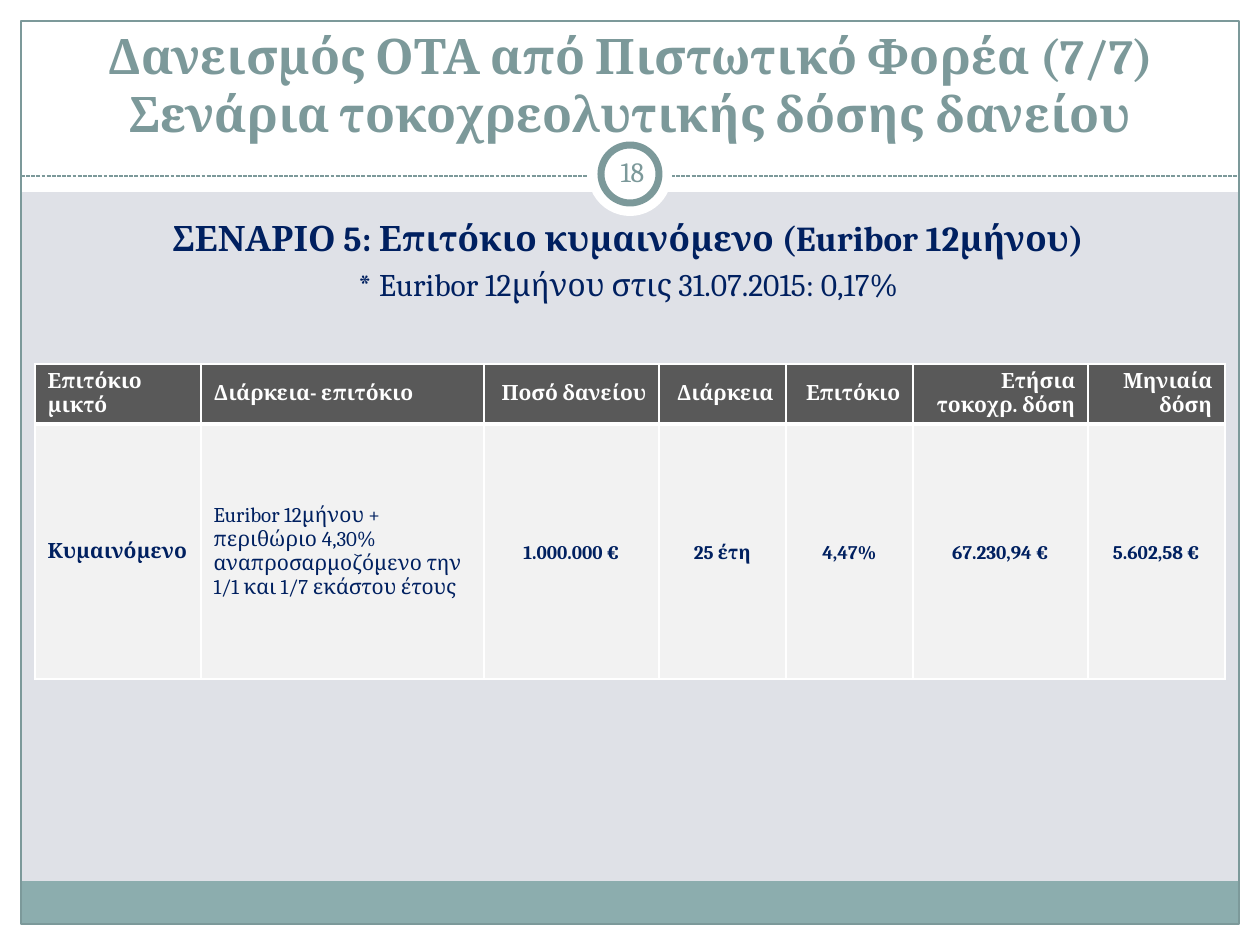
from lxml import etree
from pptx import Presentation
from pptx import util as u
from pptx.dml.color import RGBColor
from pptx.enum import dml, shapes, text
from pptx.oxml import ns

# Content
TITLE = "Δανεισμός ΟΤΑ από Πιστωτικό Φορέα (7/7)\nΣενάρια τοκοχρεολυτικής δόσης δανείου"
PAGE_NUMBER = "18"
BODY = [
    [("ΣΕΝΑΡΙΟ 5: Επιτόκιο κυμαινόμενο (Euribor 12μήνου)", "scenario")],
    [("* ", "note_mark"), ("Euribor 12μήνου στις 31.07.2015: 0,17%", "note")],
]
HEADER = ["Επιτόκιο μικτό", "Διάρκεια- επιτόκιο", "Ποσό δανείου", "Διάρκεια",
          "Επιτόκιο", "Ετήσια τοκοχρ. δόση", "Μηνιαία δόση"]
LOAN = ["Κυμαινόμενο",
        "Euribor 12μήνου + περιθώριο 4,30% αναπροσαρμοζόμενο την 1/1 και 1/7 εκάστου έτους",
        "1.000.000 €", "25 έτη", "4,47%", "67.230,94 €", "5.602,58 €"]
LABEL_COLUMNS = 2

# Theme: colours and type styles
THEME = {
    "background": "DFE1E7", "white": "FFFFFF", "band": "8CADAE", "accent": "7C999A",
    "navy": "002060", "header_fill": "595959", "loan_fill": "F2F2F2",
    "font": "Cambria",
    "styles": {
        "title": {"size": 28, "bold": True, "color": "accent"},
        "number": {"size": 16, "bold": False, "color": "accent"},
        "scenario": {"size": 20, "bold": True, "color": "navy"},
        "note_mark": {"size": 18, "bold": True, "color": "navy"},
        "note": {"size": 18, "bold": False, "color": "navy"},
        "header": {"size": 12, "bold": True, "color": "white"},
        "label": {"size": 12, "bold": True, "color": "navy"},
        "terms": {"size": 12, "bold": False, "color": "navy"},
        "figure": {"size": 11, "bold": True, "color": "navy"},
    },
}

# Geometry in px
SCALE = u.Inches(1) / 126
WIDTH, HEIGHT, MARGIN = 1260, 945, 21
TOP, RULE_Y = 192, 176
INNER = WIDTH - 2 * MARGIN
BOTTOM = HEIGHT - MARGIN
RECT, OVAL = shapes.MSO_SHAPE.RECTANGLE, shapes.MSO_SHAPE.OVAL
MARGIN_STRIPS = [(0, BOTTOM, WIDTH, MARGIN), (0, 0, WIDTH, TOP),
                 (0, 0, MARGIN, HEIGHT), (WIDTH - MARGIN, 0, MARGIN, HEIGHT)]
TITLE_BOX = (42, 26, 1176, 123)
NUMBER_BOX = (601, 141, 63, 60)
BODY_BOX = (42, 210, 1172, 630)
TABLE_AT = (35, 364)
COLUMNS = [166, 283, 175, 127, 127, 175, 137]
ROWS = [60, 255]
LEFT, CENTER, RIGHT = text.PP_ALIGN.LEFT, text.PP_ALIGN.CENTER, text.PP_ALIGN.RIGHT


def px(value):
    return u.Emu(round(value * SCALE))


def color(name):
    return RGBColor.from_string(THEME[name])


def assign(target, values):
    for name, value in values.items():
        setattr(target, name, value)


def place(shape, box):
    assign(shape, dict(zip(("left", "top", "width", "height"), map(px, box))))


def write(paragraph, runs, align, **spacing):
    assign(paragraph, {"alignment": align, **spacing})
    for words, style_name in runs:
        style = THEME["styles"][style_name]
        for index, line in enumerate(words.split("\n")):
            if index:
                paragraph.add_line_break()
            run = paragraph.add_run()
            run.text = line
            assign(run.font, {"name": THEME["font"], "size": u.Pt(style["size"]),
                              "bold": style["bold"]})
            run.font.color.rgb = color(style["color"])


def add_part(slide, kind, box, fill=None, line=None, weight=0.75):
    shape = slide.shapes.add_shape(kind, *map(px, box))
    shape.shadow.inherit = False
    if fill:
        shape.fill.solid()
        shape.fill.fore_color.rgb = color(fill)
    else:
        shape.fill.background()
    if line:
        shape.line.color.rgb = color(line)
        shape.line.width = u.Pt(weight)
    else:
        shape.line.fill.background()


def add_frame(slide):
    for strip in MARGIN_STRIPS:
        add_part(slide, RECT, strip, "white")
    add_part(slide, RECT, (MARGIN, BOTTOM - 43, INNER, 43), "band")
    add_part(slide, RECT, (MARGIN, MARGIN, INNER, HEIGHT - 2 * MARGIN), line="accent")
    rule = slide.shapes.add_connector(shapes.MSO_CONNECTOR.STRAIGHT, px(MARGIN), px(RULE_Y),
                                      px(WIDTH - MARGIN), px(RULE_Y))
    rule.line.color.rgb = color("accent")
    assign(rule.line, {"width": u.Pt(0.75), "dash_style": dml.MSO_LINE.SQUARE_DOT})
    etree.SubElement(rule.element.spPr, ns.qn("a:effectLst"))
    # Page number ring, centred on the slide
    for diameter, line in ((84, None), (58, "accent")):
        box = (WIDTH / 2 - diameter / 2, 174 - diameter / 2, diameter, diameter)
        add_part(slide, OVAL, box, "white", line, 4)


def add_text(slide):
    title, body = slide.placeholders
    for placeholder, box in ((title, TITLE_BOX), (body, BODY_BOX)):
        place(placeholder, box)
        slide.shapes.element.append(placeholder.element)  # in front of the frame
        assign(placeholder.text_frame, {"word_wrap": True, "auto_size": text.MSO_AUTO_SIZE.NONE})
    title.text_frame.vertical_anchor = text.MSO_ANCHOR.BOTTOM
    write(title.text_frame.paragraphs[0], [(TITLE, "title")], CENTER)

    number = slide.shapes.add_textbox(*map(px, NUMBER_BOX)).text_frame
    assign(number, {"word_wrap": True, "vertical_anchor": text.MSO_ANCHOR.MIDDLE})
    assign(number, {f"margin_{side}": px(6) for side in ("left", "top", "right", "bottom")})
    write(number.paragraphs[0], [(PAGE_NUMBER, "number")], CENTER)

    for index, runs in enumerate(BODY):
        frame = body.text_frame
        paragraph = frame.add_paragraph() if index else frame.paragraphs[0]
        write(paragraph, runs, CENTER)
        properties = paragraph._p.get_or_add_pPr()
        properties.set("marL", str(px(38)))
        properties.set("indent", str(px(-38)))
        etree.SubElement(properties, ns.qn("a:buNone"))


def set_borders(cell, weights):
    properties = cell._tc.get_or_add_tcPr()
    for index, (side, weight) in enumerate(weights.items()):
        border = etree.Element(ns.qn(f"a:ln{side}"), w=str(u.Pt(weight)))
        fill = etree.SubElement(border, ns.qn("a:solidFill"))
        etree.SubElement(fill, ns.qn("a:srgbClr"), val=THEME["white"])
        properties.insert(index, border)


def add_loan_table(slide):
    size = (sum(COLUMNS), sum(ROWS))
    table = slide.shapes.add_table(len(ROWS), len(COLUMNS), *map(px, TABLE_AT + size)).table
    for column, width in zip(table.columns, COLUMNS):
        column.width = px(width)
    for row, height in zip(table.rows, ROWS):
        row.height = px(height)
    for column, (heading, value) in enumerate(zip(HEADER, LOAN)):
        is_label = column < LABEL_COLUMNS
        head, loan = table.cell(0, column), table.cell(1, column)
        for cell, fill in ((head, "header_fill"), (loan, "loan_fill")):
            cell.vertical_anchor = text.MSO_ANCHOR.MIDDLE
            cell.fill.solid()
            cell.fill.fore_color.rgb = color(fill)
        assign(head, {"margin_top": px(4), "margin_bottom": px(4)})
        set_borders(head, {"L": 1, "R": 1, "T": 1, "B": 3})
        set_borders(loan, {"L": 1, "R": 1, "T": 3, "B": 1})
        write(head.text_frame.paragraphs[0], [(heading, "header")], LEFT if is_label else RIGHT)
        if is_label:
            style = ("label", "terms")[column]
            write(loan.text_frame.paragraphs[0], [(value, style)], LEFT)
        else:
            assign(loan, {"margin_left": px(9), "margin_right": px(9),
                          "margin_top": 0, "margin_bottom": 0})
            write(loan.text_frame.paragraphs[0], [(value, "figure")], CENTER, line_spacing=1.15)


def main():
    presentation = Presentation()
    assign(presentation, {"slide_width": px(WIDTH), "slide_height": px(HEIGHT)})
    slide = presentation.slides.add_slide(presentation.slide_layouts[1])
    slide.background.fill.solid()
    slide.background.fill.fore_color.rgb = color("background")
    add_frame(slide)
    add_text(slide)
    add_loan_table(slide)
    presentation.save("out.pptx")


if __name__ == "__main__":
    main()
